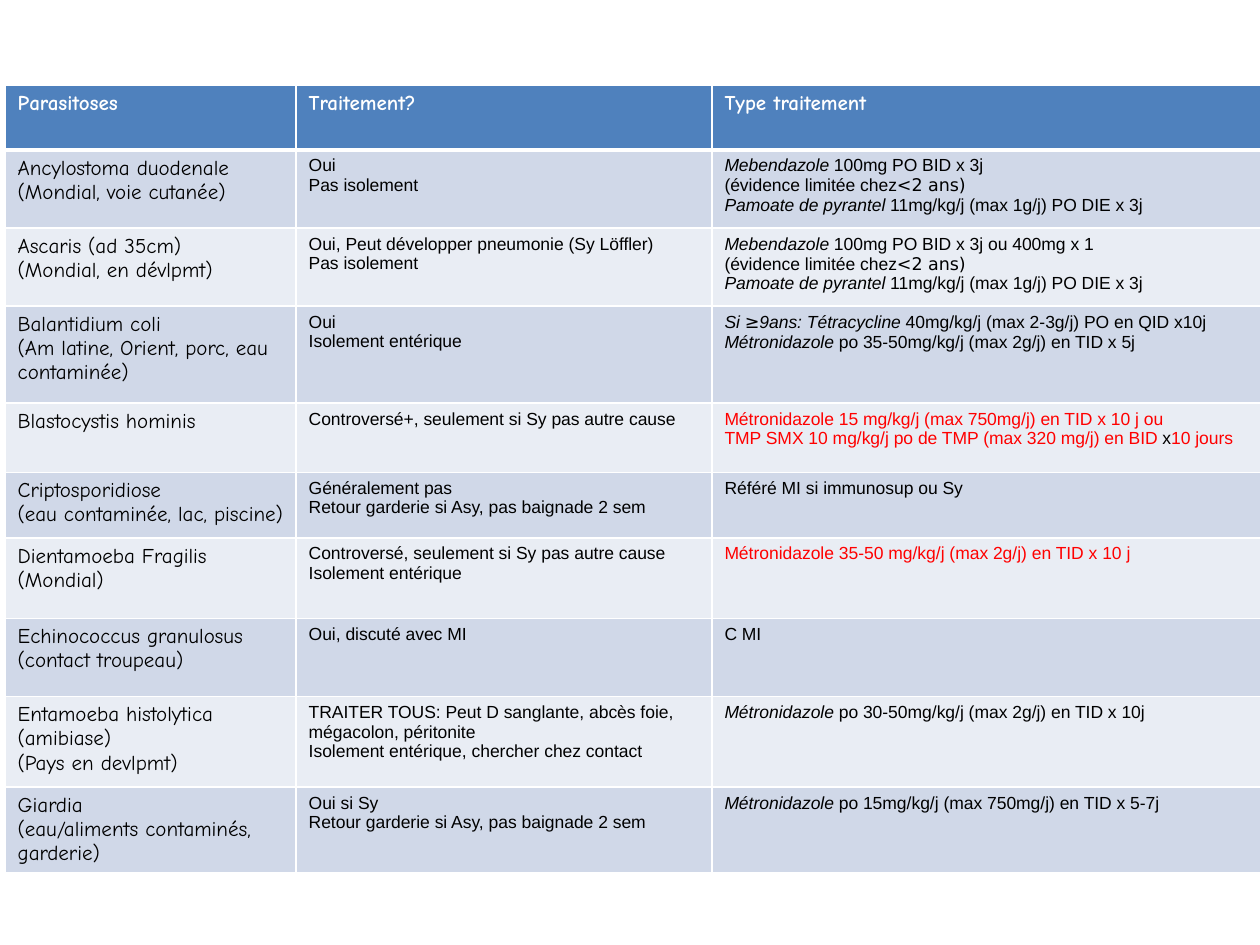
"""Build a slide with a table of parasitic infections and their treatment."""
from lxml.etree import SubElement
from pptx import Presentation
from pptx.dml.color import RGBColor
from pptx.oxml import parse_xml
from pptx.oxml.ns import nsdecls, qn
from pptx.util import Inches, Pt

COLORS = {
    "header": "4F81BD",
    "odd": "D0D8E8",
    "even": "E9EDF4",
    "white": "FFFFFF",
    "black": "000000",
    "red": "FF0000",
}
COL_WIDTHS = [2.31, 3.3, 4.37]
ROW_HEIGHTS = [0.51, 0.62, 0.62, 0.77, 0.55, 0.52, 0.64, 0.62, 0.72, 0.64]

LIMITED = [("(évidence limitée chez", ""), ("<2 ans)", "symbol")]
PYRANTEL = [("Pamoate de pyrantel ", "italic"), ("11mg/kg/j (max 1g/j) PO DIE x 3j", "")]

ROWS = [
    ("Parasitoses", "Traitement?", [[("Type traitement", "")]]),
    ("Ancylostoma duodenale\n(Mondial, voie cutanée)",
     "Oui\nPas isolement",
     [[("Mebendazole", "italic"), (" 100mg PO BID x 3j", "")], LIMITED, PYRANTEL]),
    ("Ascaris (ad 35cm)\n(Mondial, en dévlpmt)",
     "Oui, Peut développer pneumonie (Sy Löffler)\nPas isolement",
     [[("Mebendazole", "italic"), (" 100mg PO BID x 3j ou 400mg x 1", "")], LIMITED, PYRANTEL]),
    ("Balantidium coli\n(Am latine, Orient, porc, eau contaminée)",
     "Oui\nIsolement entérique",
     [[("Si ", "italic"), ("≥", "italic symbol"), ("9ans: Tétracycline", "italic"),
       (" 40mg/kg/j (max 2-3g/j) PO en QID x10j", "")],
      [("Métronidazole", "italic"), (" po 35-50mg/kg/j (max 2g/j) en TID x 5j", "")]]),
    ("Blastocystis hominis",
     "Controversé+, seulement si Sy pas autre cause",
     [[("Métronidazole 15 mg/kg/j (max 750mg/j) en TID x 10 j ou", "red")],
      [("TMP SMX 10 mg/kg/j po de TMP (max 320 mg/j) en BID ", "red"),
       ("x", ""), ("10 jours", "red")]]),
    ("Criptosporidiose\n(eau contaminée, lac, piscine)",
     "Généralement pas\nRetour garderie si Asy, pas baignade 2 sem",
     [[("Référé MI si immunosup ou Sy", "")]]),
    ("Dientamoeba Fragilis\n(Mondial)",
     "Controversé, seulement si Sy pas autre cause\nIsolement entérique",
     [[("Métronidazole 35-50 mg/kg/j (max 2g/j) en TID x 10 j", "red")]]),
    ("Echinococcus granulosus\n(contact troupeau)",
     "Oui, discuté avec MI",
     [[("C MI", "")]]),
    ("Entamoeba histolytica (amibiase)\n(Pays en devlpmt)",
     "TRAITER TOUS: Peut D sanglante, abcès foie, mégacolon, péritonite\n"
     "Isolement entérique, chercher chez contact",
     [[("Métronidazole", "italic"), (" po 30-50mg/kg/j (max 2g/j) en TID x 10j", "")]]),
    ("Giardia\n(eau/aliments contaminés, garderie)",
     "Oui si Sy\nRetour garderie si Asy, pas baignade 2 sem",
     [[("Métronidazole", "italic"), (" po 15mg/kg/j (max 750mg/j) en TID x 5-7j", "")]]),
]


def set_borders(cell, widths):
    tcPr = cell._tc.get_or_add_tcPr()
    for i, (side, width) in enumerate(widths.items()):
        ln = parse_xml(f'<a:ln{side} {nsdecls("a")} w="{Pt(width)}"/>')
        fill = SubElement(ln, qn("a:solidFill"))
        SubElement(fill, qn("a:srgbClr"), val=COLORS["white"])
        tcPr.insert(i, ln)


def add_run(p, text, style, header, first_col):
    r = p.add_run()
    r.text = text
    font = r.font
    font.size = Pt(12 if header or first_col else 10)
    font.name = "Comic Neue" if header or first_col else "Arial"
    if "symbol" in style:
        font.name = "DejaVu Sans"
    font.bold = header
    font.italic = "italic" in style
    color = "white" if header else "red" if "red" in style else "black"
    font.color.rgb = RGBColor.from_string(COLORS[color])


prs = Presentation()
prs.slide_width, prs.slide_height = Inches(10), Inches(7.5)
s = prs.slides.add_slide(prs.slide_layouts[6])

table = s.shapes.add_table(
    len(ROWS), len(COL_WIDTHS), Inches(0.04), Inches(0.68),
    Inches(sum(COL_WIDTHS)), Inches(sum(ROW_HEIGHTS))).table
for col, width in zip(table.columns, COL_WIDTHS):
    col.width = Inches(width)
for row, height in zip(table.rows, ROW_HEIGHTS):
    row.height = Inches(height)

for i, contents in enumerate(ROWS):
    fill = "header" if i == 0 else "odd" if i % 2 else "even"
    for j, content in enumerate(contents):
        cell = table.cell(i, j)
        cell.fill.solid()
        cell.fill.fore_color.rgb = RGBColor.from_string(COLORS[fill])
        set_borders(cell, {"L": 1, "R": 1, "T": 3 if i == 1 else 1, "B": 3 if i == 0 else 1})
        if isinstance(content, str):
            content = [[(line, "")] for line in content.split("\n")]
        tf = cell.text_frame
        for k, runs in enumerate(content):
            p = tf.add_paragraph() if k else tf.paragraphs[0]
            for text, style in runs:
                add_run(p, text, style, i == 0, j == 0)

prs.save("out.pptx")
